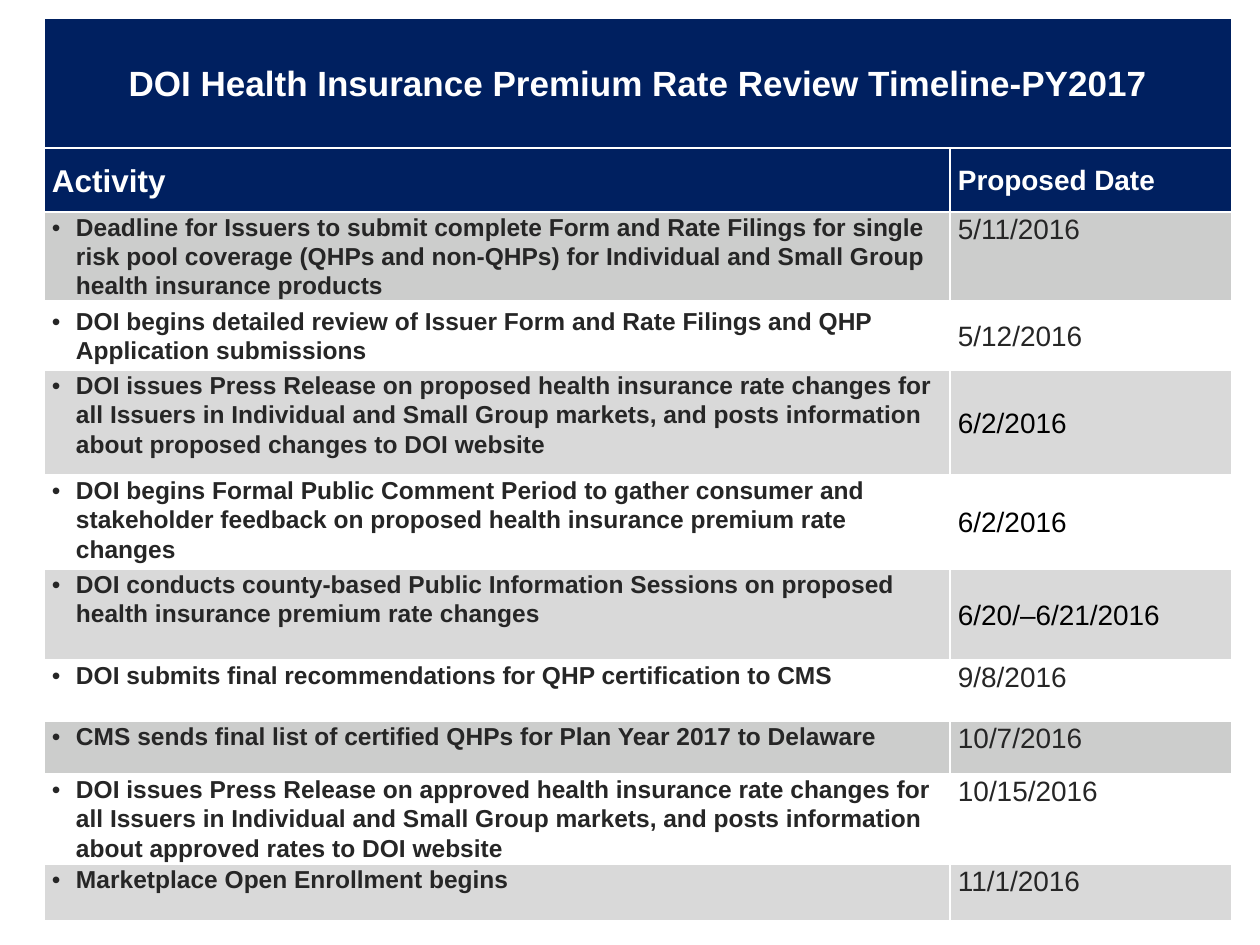
"""Build the rate review timeline slide."""
import pptx
import pptx.util
import pptx.dml.color
import pptx.enum.text
import pptx.oxml
import pptx.oxml.ns

SCALE = 914400 / 126
HUES = {"navy": "002060", "white": "FFFFFF", "gray": "CCCDCC",
        "pale": "D9D9D9", "text": "262626", "black": "000000"}
MID = pptx.enum.text.MSO_ANCHOR.MIDDLE
TOP = pptx.enum.text.MSO_ANCHOR.TOP
LEFT = pptx.enum.text.PP_ALIGN.LEFT
CENTER = pptx.enum.text.PP_ALIGN.CENTER
NS = pptx.oxml.ns.nsdecls("a")


def px(count):
    return pptx.util.Emu(round(count * SCALE))


def write(cell, text, size, bold, hue, fill, anchor=TOP, align=LEFT, bullet=False):
    form = {"margin_left": px(8), "margin_right": px(8), "margin_top": 0,
            "margin_bottom": 0, "vertical_anchor": anchor}
    for key, value in form.items():
        setattr(cell, key, value)
    para = cell.text_frame.paragraphs[0]
    para.alignment = align
    para.line_spacing = 1.07
    if bullet:
        props = para._p.get_or_add_pPr()
        props.set("marL", str(px(24)))
        props.set("indent", str(-px(24)))
        for mark in ('buFont {} typeface="Arial"', 'buChar {} char="•"'):
            props.append(pptx.oxml.parse_xml(f"<a:{mark.format(NS)}/>"))
    run = para.add_run()
    run.text = text
    for key, value in {"name": "Arial", "size": pptx.util.Pt(size), "bold": bold}.items():
        setattr(run.font, key, value)
    run.font.color.rgb = pptx.dml.color.RGBColor.from_string(HUES[hue])
    props = cell._tc.get_or_add_tcPr()
    for side in ("lnL", "lnR", "lnT", "lnB"):
        props.append(pptx.oxml.parse_xml(
            f'<a:{side} {NS} w="12700"><a:solidFill><a:srgbClr val="{HUES["white"]}"/>'
            f'</a:solidFill></a:{side}>'))
    cell.fill.solid()
    cell.fill.fore_color.rgb = pptx.dml.color.RGBColor.from_string(HUES[fill])


STEPS = [
    ("Deadline for Issuers to submit complete Form and Rate Filings for single risk pool "
     "coverage (QHPs and non-QHPs) for Individual and Small Group health insurance products",
     "5/11/2016", 88, "gray", "text", TOP, TOP),
    ("DOI begins detailed review of Issuer Form and Rate Filings and QHP Application submissions",
     "5/12/2016", 70, "white", "text", MID, MID),
    ("DOI issues Press Release on proposed health insurance rate changes for all Issuers in "
     "Individual and Small Group markets, and posts information about proposed changes to "
     "DOI website", "6/2/2016", 105, "pale", "black", TOP, MID),
    ("DOI begins Formal Public Comment Period to gather consumer and stakeholder feedback on "
     "proposed health insurance premium rate changes",
     "6/2/2016", 94, "white", "black", TOP, MID),
    ("DOI conducts county-based Public Information Sessions on proposed health insurance "
     "premium rate changes", "6/20/–6/21/2016", 91, "pale", "black", TOP, MID),
    ("DOI submits final recommendations for QHP certification to CMS",
     "9/8/2016", 61, "white", "text", TOP, TOP),
    ("CMS sends final list of certified QHPs for Plan Year 2017 to Delaware",
     "10/7/2016", 53, "gray", "text", TOP, TOP),
    ("DOI issues Press Release on approved health insurance rate changes for all Issuers in "
     "Individual and Small Group markets, and posts information about approved rates to "
     "DOI website", "10/15/2016", 90, "white", "text", TOP, TOP),
    ("Marketplace Open Enrollment begins", "11/1/2016", 57, "pale", "text", TOP, TOP),
]

deck = pptx.Presentation()
deck.slide_width, deck.slide_height = px(1260), px(945)
slide = deck.slides.add_slide(deck.slide_layouts[6])

wide = [906, 282]
tall = [130, 64] + [step[2] for step in STEPS]
table = slide.shapes.add_table(len(tall), len(wide), px(44), px(18),
                               px(sum(wide)), px(sum(tall))).table
for col, width in zip(table.columns, wide):
    col.width = px(width)
for row, height in zip(table.rows, tall):
    row.height = px(height)

table.cell(0, 0).merge(table.cell(0, 1))
write(table.cell(0, 0), "DOI Health Insurance Premium Rate Review Timeline-PY2017",
      20, True, "white", "navy", MID, CENTER)
for col, (label, size) in enumerate([("Activity", 18), ("Proposed Date", 16)]):
    write(table.cell(1, col), label, size, True, "white", "navy", MID)
for row, (task, date, height, fill, hue, start, end) in enumerate(STEPS, 2):
    write(table.cell(row, 0), task, 14, True, "text", fill, start, bullet=True)
    write(table.cell(row, 1), date, 16, False, hue, fill, end)

deck.save("out.pptx")
